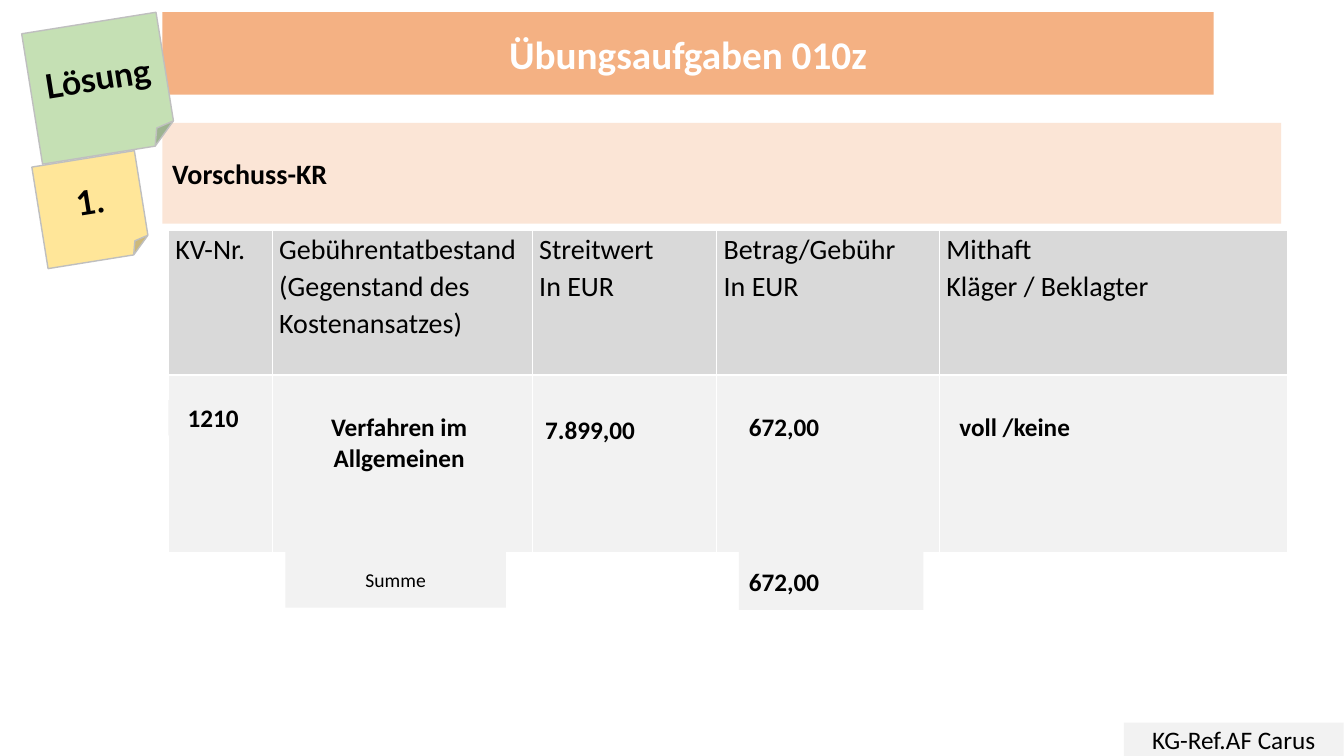
import pptx
import pptx.dml.color
import pptx.enum.shapes
import pptx.enum.text
import pptx.oxml
import pptx.oxml.ns
import pptx.util
from dataclasses import dataclass


@dataclass(frozen=True)
class Theme:
    body_font: str = "Calibri"
    note_font: str = "Lato"
    title_size: int = 28
    note_size: int = 24
    heading_size: int = 20
    entry_size: int = 18
    sum_size: int = 14
    line_spacing: float = 1.07
    black: str = "000000"
    white: str = "FFFFFF"
    orange: str = "F4B183"
    peach: str = "FBE5D6"
    header_grey: str = "D9D9D9"
    entry_grey: str = "F2F2F2"
    green: str = "C5E0B4"
    yellow: str = "FFE699"
    note_edge: str = "BFBFBF"


theme = Theme()
rgb = pptx.dml.color.RGBColor.from_string
PRESET = pptx.enum.shapes.MSO_SHAPE
LEFT, CENTER = pptx.enum.text.PP_ALIGN.LEFT, pptx.enum.text.PP_ALIGN.CENTER
MIDDLE = pptx.enum.text.MSO_ANCHOR.MIDDLE

deck = pptx.Presentation()
deck.slide_width = pptx.util.Inches(13.33)
deck.slide_height = pptx.util.Inches(7.5)
slide = deck.slides.add_slide(deck.slide_layouts[5])

# Grid of 160 columns by 90 rows
COLUMN = deck.slide_width / 160
ROW = deck.slide_height / 90


def write(frame, text, size, color=theme.black, bold=False, align=LEFT,
          spacing=None, font=theme.body_font):
    frame.text = text
    frame.word_wrap = True
    for paragraph in frame.paragraphs:
        paragraph.alignment = align
        paragraph.line_spacing = spacing
        for run in paragraph.runs:
            run.font.name = font
            run.font.size = pptx.util.Pt(size)
            run.font.bold = bold
            run.font.color.rgb = rgb(color)


def add_panel(area, fill, preset=PRESET.RECTANGLE):
    """Add a filled, unlined shape; area is left, top, width, height in grid units."""
    left, top, width, height = area
    panel = slide.shapes.add_shape(preset, int(left * COLUMN), int(top * ROW),
                                   int(width * COLUMN), int(height * ROW))
    panel.shadow.inherit = False
    panel.fill.solid()
    panel.fill.fore_color.rgb = rgb(fill)
    panel.line.fill.background()
    panel.text_frame.vertical_anchor = MIDDLE
    return panel


# Title on a rounded bar
title = slide.shapes.title
title.left, title.top = int(19.32 * COLUMN), int(1.44 * ROW)
title.width, title.height = int(125.16 * COLUMN), int(9.84 * ROW)
title.element.spPr.append(pptx.oxml.parse_xml(
    f'<a:prstGeom {pptx.oxml.ns.nsdecls("a")} prst="roundRect"><a:avLst/></a:prstGeom>'))
title.fill.solid()
title.fill.fore_color.rgb = rgb(theme.orange)
title.text_frame.vertical_anchor = MIDDLE
write(title.text_frame, "Übungsaufgaben 010z", theme.title_size, theme.white, True, CENTER)

# Fee table: header row and one row for the entries
fee_columns = [
    ("KV-Nr.", 12.36),
    ("Gebührentatbestand\n(Gegenstand des Kostenansatzes)", 30.96),
    ("Streitwert\nIn EUR", 21.96),
    ("Betrag/Gebühr\nIn EUR", 26.52),
    ("Mithaft\nKläger / Beklagter", 41.4),
]
fee_rows = [(17.16, theme.header_grey), (21.12, theme.entry_grey)]
fees = slide.shapes.add_table(
    len(fee_rows), len(fee_columns), int(20.04 * COLUMN), int(27.48 * ROW),
    int(sum(width for _, width in fee_columns) * COLUMN),
    int(sum(height for height, _ in fee_rows) * ROW)).table
fees.first_row = fees.horz_banding = False

for row, (height, fill) in enumerate(fee_rows):
    fees.rows[row].height = int(height * ROW)
    for column, (heading, width) in enumerate(fee_columns):
        fees.columns[column].width = int(width * COLUMN)
        cell = fees.cell(row, column)
        cell.margin_left = cell.margin_right = pptx.util.Inches(0.07)
        cell.margin_top = cell.margin_bottom = 0
        for edge in ("lnL", "lnR", "lnT", "lnB"):
            cell._tc.get_or_add_tcPr().append(pptx.oxml.parse_xml(
                f'<a:{edge} {pptx.oxml.ns.nsdecls("a")} w="12700"><a:solidFill>'
                f'<a:srgbClr val="{theme.white}"/></a:solidFill></a:{edge}>'))
        cell.fill.solid()
        cell.fill.fore_color.rgb = rgb(fill)
        if row == 0:
            write(cell.text_frame, heading, theme.heading_size, spacing=theme.line_spacing)

section = add_panel((19.32, 14.64, 133.2, 12), theme.peach)
write(section.text_frame, "Vorschuss-KR", theme.heading_size, bold=True)

# Sticky notes
for text, area, fill in [
    ("Lösung", (3.72, 2.64, 16.2, 15.72), theme.green),
    ("1.", (4.68, 18.84, 12.36, 12.24), theme.yellow),
]:
    note = add_panel(area, fill, PRESET.FOLDED_CORNER)
    note.rotation = 350.9
    note.line.color.rgb = rgb(theme.note_edge)
    note.line.width = pptx.util.Pt(1)
    write(note.text_frame, text, theme.note_size, bold=True, align=CENTER,
          font=theme.note_font)

# Centred labels
for text, area, size, bold in [
    ("KG-Ref.AF Carus", (133.8, 86.04, 26.16, 3.96), theme.entry_size, False),
    ("1210", (20.04, 47.64, 10.68, 4.2), theme.entry_size, True),
    ("Summe", (33.96, 65.64, 26.28, 6.72), theme.sum_size, False),
]:
    label = add_panel(area, theme.entry_grey)
    write(label.text_frame, text, size, bold=bold, align=CENTER)

procedure = add_panel((33.96, 46.56, 27.12, 15.72), theme.entry_grey)
procedure.text_frame.margin_bottom = pptx.util.Inches(0.35)
write(procedure.text_frame, "Verfahren im Allgemeinen", theme.entry_size,
      bold=True, align=CENTER)

# Amounts and liability
for text, area in [
    ("7.899,00", (63.72, 48.48, 20.4, 4.92)),
    ("672,00", (87.96, 47.16, 16.32, 6.96)),
    ("voll /keine", (113.04, 47.52, 31.32, 6.24)),
    ("672,00", (87.96, 65.64, 21.96, 6.96)),
]:
    entry = add_panel(area, theme.entry_grey)
    write(entry.text_frame, text, theme.entry_size, bold=True, spacing=theme.line_spacing)

deck.save("out.pptx")
